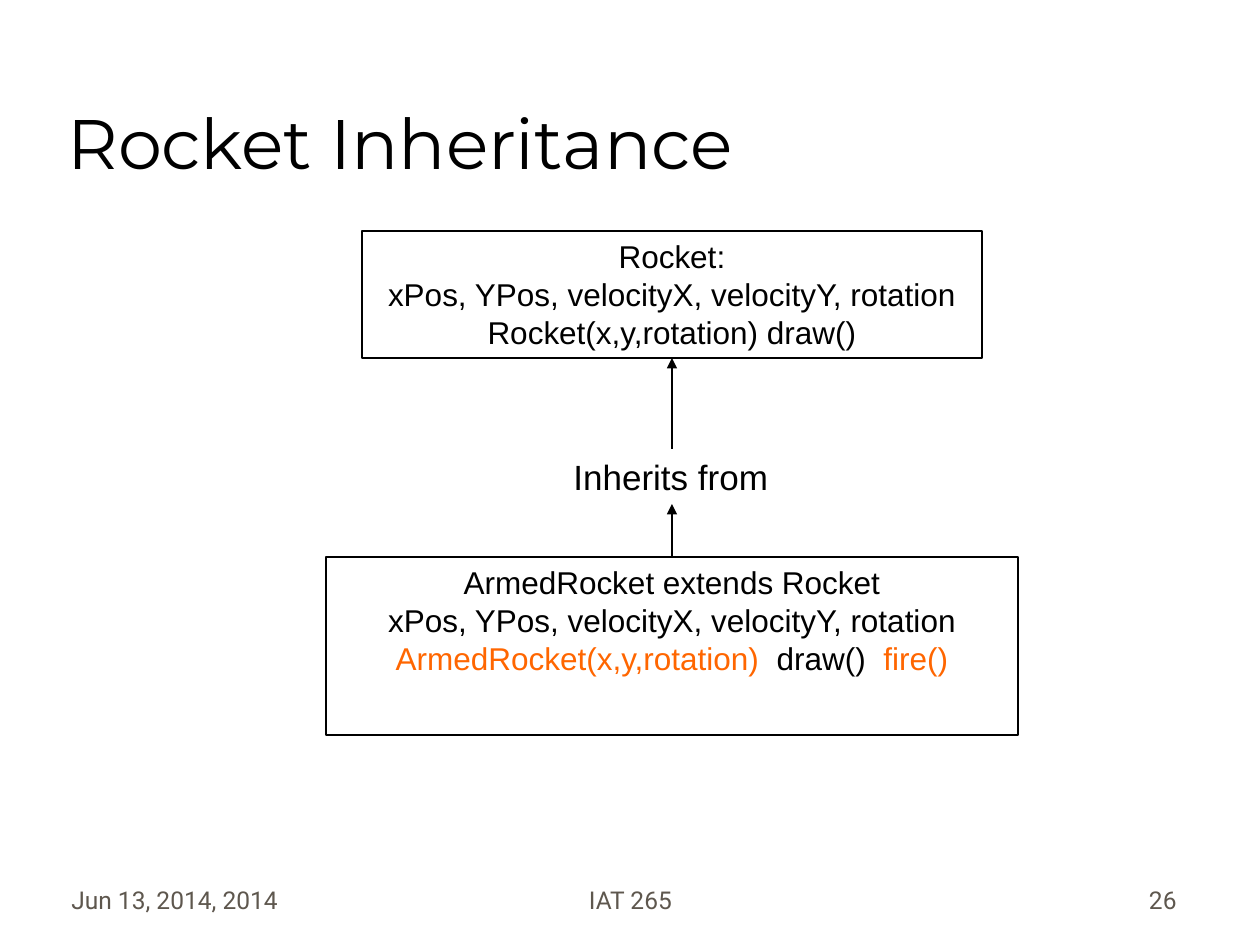
from dataclasses import dataclass

from lxml import etree
from pptx import Presentation
from pptx.dml.color import RGBColor
from pptx.enum.shapes import MSO_CONNECTOR, MSO_SHAPE
from pptx.enum.text import MSO_ANCHOR as Anchor, MSO_AUTO_SIZE as AutoSize, PP_ALIGN as Align
from pptx.oxml.ns import qn
from pptx.util import Emu, Pt

EMU_PER_PX = 914400 / 126
TOP, BOTTOM = 0, 2


def px(length):
    return Emu(round(length * EMU_PER_PX))


@dataclass(frozen=True)
class Theme:
    ink: str = "000000"
    accent: str = "FF6600"
    muted: str = "5E574E"
    paper: str = "FFFFFF"
    title_font: str = "Montserrat"
    body_font: str = "Arial"
    footer_font: str = "Roboto"
    title_size: int = 40
    label_size: int = 20
    body_size: int = 18
    footer_size: int = 14
    line_width: int = 1


class SlideBuilder:
    def __init__(self, slide, theme):
        self.slide = slide
        self.theme = theme
        slide.background.fill.solid()
        slide.background.fill.fore_color.rgb = RGBColor.from_string(theme.paper)

    def style_run(self, run, font, size, color):
        run.font.name = font
        run.font.size = Pt(size)
        run.font.color.rgb = RGBColor.from_string(color)

    def style_line(self, line):
        line.color.rgb = RGBColor.from_string(self.theme.ink)
        line.width = Pt(self.theme.line_width)

    def title(self, text, left, top, width, height):
        shape = self.slide.shapes.title
        shape.left, shape.top, shape.width, shape.height = map(px, (left, top, width, height))
        frame = shape.text_frame
        frame.text = text
        frame.auto_size = AutoSize.NONE
        frame.vertical_anchor = Anchor.BOTTOM
        paragraph = frame.paragraphs[0]
        paragraph.alignment = Align.LEFT
        self.style_run(paragraph.runs[0], self.theme.title_font, self.theme.title_size, self.theme.ink)

    def text(self, text, left, top, width, height, font, size, color,
             align=Align.LEFT, anchor=Anchor.TOP, wrap=True):
        shape = self.slide.shapes.add_textbox(*map(px, (left, top, width, height)))
        frame = shape.text_frame
        frame.text = text
        frame.word_wrap = wrap
        frame.vertical_anchor = anchor
        paragraph = frame.paragraphs[0]
        paragraph.alignment = align
        self.style_run(paragraph.runs[0], font, size, color)
        return shape

    def class_box(self, lines, left, top, width, height):
        """Each line is a list of (text, color) pieces."""
        shape = self.slide.shapes.add_shape(MSO_SHAPE.RECTANGLE, *map(px, (left, top, width, height)))
        shape.shadow.inherit = False
        shape.fill.background()
        self.style_line(shape.line)
        frame = shape.text_frame
        frame.word_wrap = True
        frame.vertical_anchor = Anchor.TOP
        for index, pieces in enumerate(lines):
            paragraph = frame.add_paragraph() if index else frame.paragraphs[0]
            paragraph.alignment = Align.CENTER
            for text, color in pieces:
                run = paragraph.add_run()
                run.text = text
                self.style_run(run, self.theme.body_font, self.theme.body_size, color)
        return shape

    def arrow_up(self, lower, upper):
        connector = self.slide.shapes.add_connector(MSO_CONNECTOR.STRAIGHT, 0, 0, 0, 0)
        connector.begin_connect(lower, TOP)
        connector.end_connect(upper, BOTTOM)
        self.style_line(connector.line)
        etree.SubElement(connector.line._get_or_add_ln(), qn("a:tailEnd"), type="triangle")
        etree.SubElement(connector._element.spPr, qn("a:effectLst"))


def main():
    presentation = Presentation()
    presentation.slide_width, presentation.slide_height = px(1260), px(945)
    theme = Theme()
    slide = presentation.slides.add_slide(presentation.slide_layouts[5])
    builder = SlideBuilder(slide, theme)

    builder.title("Rocket Inheritance", 55, 32, 1071, 158)

    # Footer
    for text, left, width, align in (
        ("Jun 13, 2014, 2014", 59, 339, Align.LEFT),
        ("IAT 265", 431, 399, Align.CENTER),
        ("26", 927, 262, Align.RIGHT),
    ):
        builder.text(text, left, 858, width, 63, theme.footer_font, theme.footer_size,
                     theme.muted, align, Anchor.BOTTOM)

    # Parent and child classes
    fields = [("xPos, YPos, velocityX, velocityY, rotation", theme.ink)]
    rocket = builder.class_box([
        [("Rocket:", theme.ink)],
        fields,
        [("Rocket(x,y,rotation) draw()", theme.ink)],
    ], 362, 231, 620, 127)
    armed_rocket = builder.class_box([
        [("ArmedRocket extends Rocket", theme.ink)],
        fields,
        [("ArmedRocket(x,y,rotation)  ", theme.accent), ("draw()  ", theme.ink), ("fire()", theme.accent)],
    ], 326, 557, 692, 178)

    # Relation between them
    relation = builder.text("Inherits from", 561, 449, 222, 55, theme.body_font,
                            theme.label_size, theme.ink, wrap=False)
    builder.arrow_up(armed_rocket, relation)
    builder.arrow_up(relation, rocket)

    presentation.save("out.pptx")


if __name__ == "__main__":
    main()
